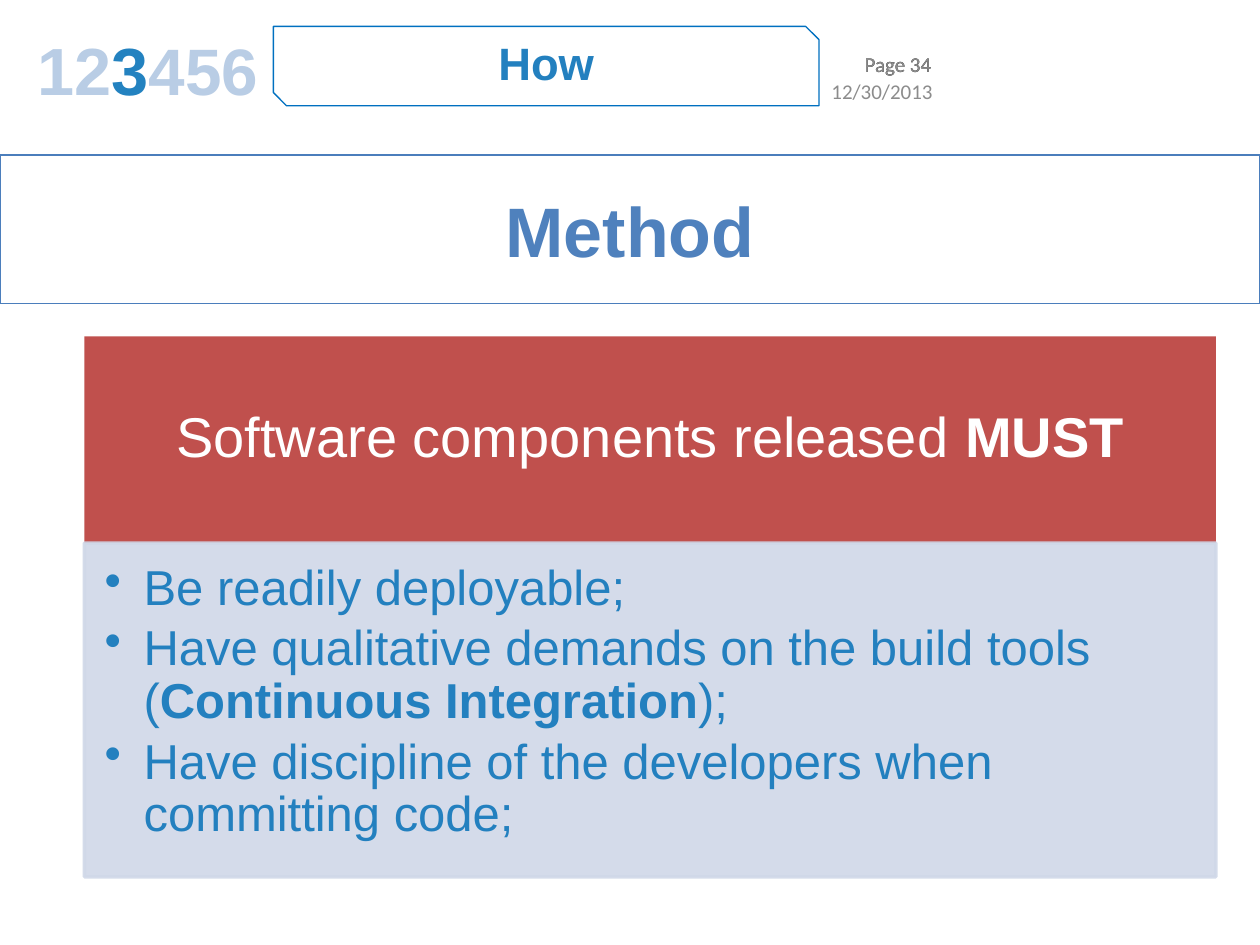
"""Build the "Method" slide: a numbered header, a title band and a requirements panel."""
from lxml import etree
from pptx import Presentation
from pptx import util as u
from pptx.dml import color
from pptx.enum import shapes, text
from pptx.oxml.ns import qn

COLORS = {
    "red": "C0504D", "panel": "D0D8E8", "white": "FFFFFF", "blue": "2380BF",
    "current": "2382C0", "faded": "B9CDE5", "frame": "0070C0", "band": "4B7EBC",
    "title": "4F81BD", "gray": "8C8C8C", "black": "000000",
}
ALIGN = text.PP_ALIGN
MIDDLE = text.MSO_ANCHOR.MIDDLE

deck = Presentation()
deck.slide_width, deck.slide_height = u.Inches(10), u.Inches(7.5)
slide = deck.slides.add_slide(deck.slide_layouts[6])
COL, ROW = deck.slide_width / 100, deck.slide_height / 100


def add_block(left, top, width, height, preset=None, fill=None, line=None, weight=0.75, alpha=None):
    box = [round(n) for n in (left * COL, top * ROW, width * COL, height * ROW)]
    if preset is None:
        return slide.shapes.add_textbox(*box)
    block = slide.shapes.add_shape(preset, *box)
    block.shadow.inherit = False
    for paint, name in ((block.fill, fill), (block.line.fill, line)):
        if name is None:
            paint.background()
        else:
            paint.solid()
            paint.fore_color.rgb = color.RGBColor.from_string(COLORS[name])
    if line:
        block.line.width = u.Pt(weight)
    if alpha:
        for tint in block._element.spPr.iter(qn("a:srgbClr")):
            etree.SubElement(tint, qn("a:alpha"), val=str(alpha * 1000))
    return block


def write(block, paragraphs, size=12, font="Arial", ink="gray", bold=False, align=ALIGN.LEFT,
          anchor=MIDDLE, insets=(0.1, 0.05, 0.1, 0.05), spacing=None, after=None, bullet=None):
    frame = block.text_frame
    frame.word_wrap = True
    frame.vertical_anchor = anchor
    frame.margin_left, frame.margin_top, frame.margin_right, frame.margin_bottom = map(u.Inches, insets)
    for index, pieces in enumerate(paragraphs):
        para = frame.add_paragraph() if index else frame.paragraphs[0]
        if bullet:
            para.level = 1
            props = para._p.get_or_add_pPr()
            props.set("marL", str(u.Inches(0.31)))
            props.set("indent", str(u.Inches(-0.31)))
            etree.SubElement(props, qn("a:buChar"), char=bullet)
        para.alignment = align
        para.line_spacing = spacing
        if after:
            para.space_after = u.Pt(after)
        for words, changes in pieces:
            run = para.add_run()
            run.text = words
            run.font.name = font
            run.font.size = u.Pt(changes.get("size", size))
            run.font.bold = changes.get("bold", bold)
            run.font.color.rgb = color.RGBColor.from_string(COLORS[changes.get("ink", ink)])


RECT = shapes.MSO_SHAPE.RECTANGLE
strong = {"bold": True}

heading = add_block(6.7, 35.6, 89.8, 21.87, RECT, fill="red")
write(heading, [[("Software components released ", {}), ("MUST", strong)]], size=32, ink="white",
      align=ALIGN.CENTER, insets=(0.25, 0.14, 0.25, 0.14), spacing=0.9)

requirements = add_block(6.7, 57.47, 89.8, 35.33, RECT, fill="panel", line="panel", weight=2, alpha=90)
write(requirements, [
    [("Be readily deployable;", {})],
    [("Have qualitative demands on the build tools (", {}), ("Continuous Integration", strong), (");", {})],
    [("Have discipline of the developers when committing code;", {})],
], size=28, ink="blue", anchor=text.MSO_ANCHOR.TOP, insets=(0.16, 0.16, 0.22, 0.24),
    spacing=0.9, after=4.2, bullet="•")

for ink in ("black", "gray"):
    page_number = add_block(63.3, 4.13, 11.6, 5.33)
    write(page_number, [[("Page 34", {})]], font="Calibri", ink=ink, align=ALIGN.RIGHT)

section = add_block(21.7, 2.8, 43.3, 8.4, shapes.MSO_SHAPE.SNIP_2_DIAG_RECTANGLE, line="frame")
write(section, [[("How", {})]], size=25.9, ink="blue", bold=True, align=ALIGN.CENTER, spacing=0.9)

progress = add_block(2, 3.87, 73.2, 8.4)
write(progress, [[("12", {}), ("3", {"ink": "current"}), ("456", {"size": 37.5})]],
      size=38.1, ink="faded", bold=True, align=ALIGN.JUSTIFY, spacing=0.8)

date = add_block(65, 6.93, 12.5, 5.33)
write(date, [[("12/30/2013", {})]], font="Calibri")

title = add_block(0, 16.4, 100, 15.73, RECT, line="band")
write(title, [[("Method", {})]], size=40, ink="title", bold=True, align=ALIGN.CENTER)

deck.save("out.pptx")
